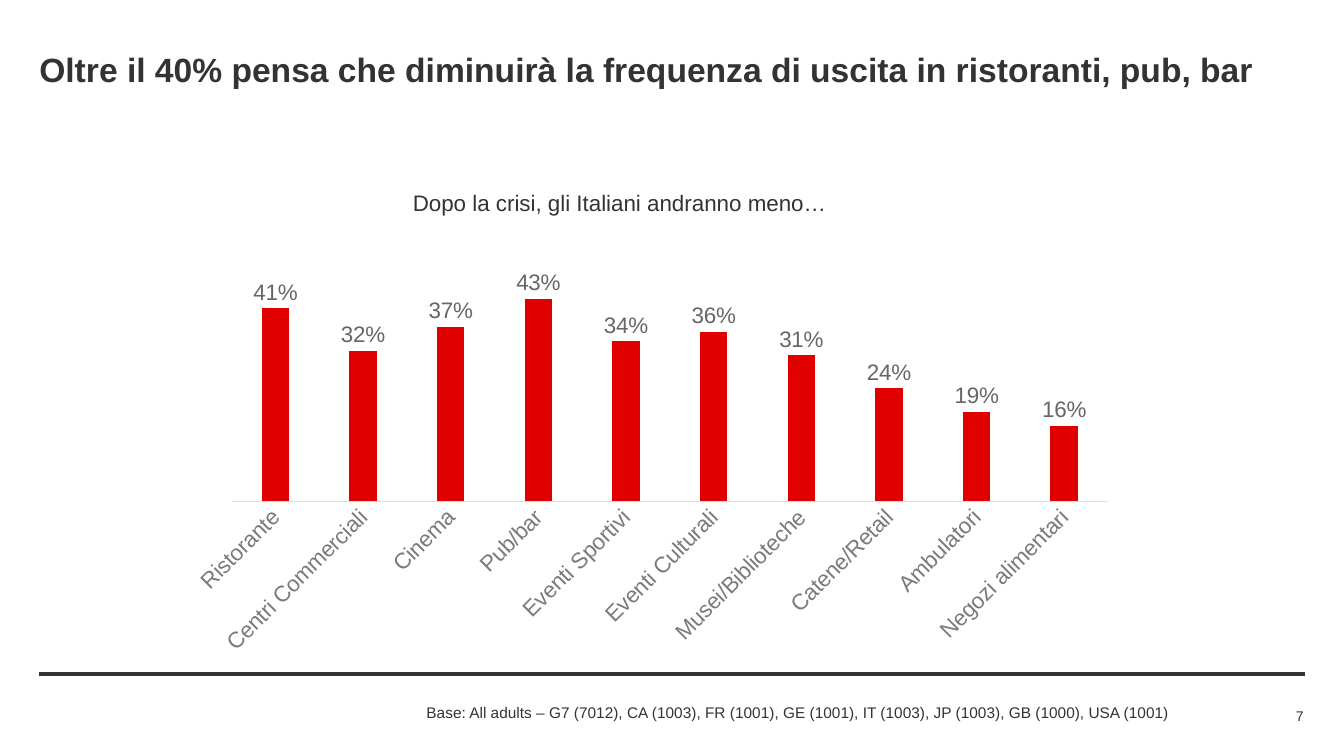
from dataclasses import dataclass

from lxml import etree
from pptx import Presentation
from pptx.chart.data import CategoryChartData
from pptx.dml.color import RGBColor
from pptx.enum.chart import XL_CHART_TYPE, XL_LABEL_POSITION, XL_TICK_MARK
from pptx.enum.shapes import MSO_CONNECTOR
from pptx.enum.text import MSO_ANCHOR, PP_ALIGN
from pptx.oxml import parse_xml
from pptx.oxml.ns import nsdecls, qn
from pptx.slide import Slide
from pptx.text.text import Font
from pptx.util import Inches, Pt

COLUMNS = XL_CHART_TYPE.COLUMN_CLUSTERED
OUTSIDE_END = XL_LABEL_POSITION.OUTSIDE_END
NO_TICK = XL_TICK_MARK.NONE
STRAIGHT = MSO_CONNECTOR.STRAIGHT
TOP, MIDDLE = MSO_ANCHOR.TOP, MSO_ANCHOR.MIDDLE
LEFT, CENTER, RIGHT = PP_ALIGN.LEFT, PP_ALIGN.CENTER, PP_ALIGN.RIGHT


@dataclass(frozen=True)
class Theme:
    font: str = "Arial"
    ink: str = "333333"
    bar: str = "E10000"
    value: str = "666666"
    category: str = "7A7A7A"
    axis: str = "E0E0E0"
    title_size: int = 24
    body_size: int = 16
    note_size: int = 11
    page_size: int = 10


@dataclass(frozen=True)
class Label:
    text: str
    left: float
    top: float
    width: float
    height: float
    size: int
    align: PP_ALIGN = LEFT
    anchor: MSO_ANCHOR = TOP
    bold: bool = False
    wrap: bool = True


THEME = Theme()

LABELS = [
    Label("Oltre il 40% pensa che diminuirà la frequenza di uscita in ristoranti, pub, bar",
          0.39, 0.47, 12.54, 0.44, THEME.title_size, anchor=MIDDLE, bold=True),
    Label("Dopo la crisi, gli Italiani andranno meno…",
          2.04, 1.88, 8.21, 0.27, THEME.body_size, align=CENTER),
    Label("Base: All adults – G7 (7012), CA (1003), FR (1001), GE (1001), "
          "IT (1003), JP (1003), GB (1000), USA (1001)",
          4.23, 6.98, 7.47, 0.19, THEME.note_size, wrap=False),
    Label("7", 11.87, 6.99, 1.06, 0.22, THEME.page_size, align=RIGHT, anchor=MIDDLE),
]

SHARES = {
    "Ristorante": 0.41,
    "Centri Commerciali": 0.32,
    "Cinema": 0.37,
    "Pub/bar": 0.43,
    "Eventi Sportivi": 0.34,
    "Eventi Culturali": 0.36,
    "Musei/Biblioteche": 0.31,
    "Catene/Retail": 0.24,
    "Ambulatori": 0.19,
    "Negozi alimentari": 0.16,
}


def style_font(font: Font, size: int, color: str, bold: bool = False) -> None:
    font.name = THEME.font
    font.size = Pt(size)
    font.bold = bold
    font.color.rgb = RGBColor.from_string(color)


def add_label(s: Slide, label: Label) -> None:
    box = s.shapes.add_textbox(Inches(label.left), Inches(label.top),
                               Inches(label.width), Inches(label.height))
    tf = box.text_frame
    tf.margin_left = tf.margin_right = tf.margin_top = tf.margin_bottom = 0
    tf.word_wrap = label.wrap
    tf.vertical_anchor = label.anchor
    p = tf.paragraphs[0]
    p.text = label.text
    p.alignment = label.align
    style_font(p.runs[0].font, label.size, THEME.ink, label.bold)


def add_footer_rule(s: Slide) -> None:
    y = Inches(6.69)
    rule = s.shapes.add_connector(STRAIGHT, Inches(0.39), y, Inches(12.94), y)
    rule.line.color.rgb = RGBColor.from_string(THEME.ink)
    rule.line.width = Pt(3)
    etree.SubElement(rule._element.spPr, qn("a:effectLst"))


def add_shares_chart(s: Slide) -> None:
    data = CategoryChartData(number_format="0%")
    data.categories = list(SHARES)
    data.add_series("Series 1", list(SHARES.values()))
    chart = s.shapes.add_chart(COLUMNS, Inches(1.73), Inches(2.56),
                               Inches(9.45), Inches(4.02), data).chart
    chart.has_title = False
    chart.has_legend = False
    style_font(chart.font, THEME.body_size, THEME.ink)

    plot = chart.plots[0]
    plot.gap_width = 219
    plot.overlap = -27
    plot.vary_by_categories = False
    fill = plot.series[0].format.fill
    fill.solid()
    fill.fore_color.rgb = RGBColor.from_string(THEME.bar)

    plot.has_data_labels = True
    labels = plot.data_labels
    labels.show_value = True
    labels.number_format = "0%"
    labels.number_format_is_linked = False
    labels.position = OUTSIDE_END
    style_font(labels.font, THEME.body_size, THEME.value)

    values = chart.value_axis
    values.minimum_scale = 0
    values.maximum_scale = 0.5
    values.has_major_gridlines = False
    values.tick_labels.number_format = "0%"
    values.tick_labels.number_format_is_linked = False
    values.visible = False

    categories = chart.category_axis
    categories.major_tick_mark = categories.minor_tick_mark = NO_TICK
    categories.format.line.color.rgb = RGBColor.from_string(THEME.axis)
    categories.format.line.width = Pt(0.75)
    style_font(categories.tick_labels.font, THEME.body_size, THEME.category)
    body = categories._element.find(qn("c:txPr")).find(qn("a:bodyPr"))
    body.set("rot", "-2700000")
    body.set("vert", "horz")

    area = chart.element.find(f".//{qn('c:plotArea')}")
    for layout in area.findall(qn("c:layout")):
        area.remove(layout)
    area.insert(0, parse_xml(
        f'<c:layout {nsdecls("c")}><c:manualLayout>'
        '<c:layoutTarget val="inner"/><c:xMode val="edge"/><c:yMode val="edge"/>'
        '<c:x val="0.06"/><c:y val="0.02"/><c:w val="0.92"/><c:h val="0.58"/>'
        '</c:manualLayout></c:layout>'))


def main() -> None:
    prs = Presentation()
    prs.slide_width = Inches(13.33)
    prs.slide_height = Inches(7.5)
    s = prs.slides.add_slide(prs.slide_layouts[6])
    add_footer_rule(s)
    add_shares_chart(s)
    for label in LABELS:
        add_label(s, label)
    prs.save("out.pptx")


if __name__ == "__main__":
    main()
